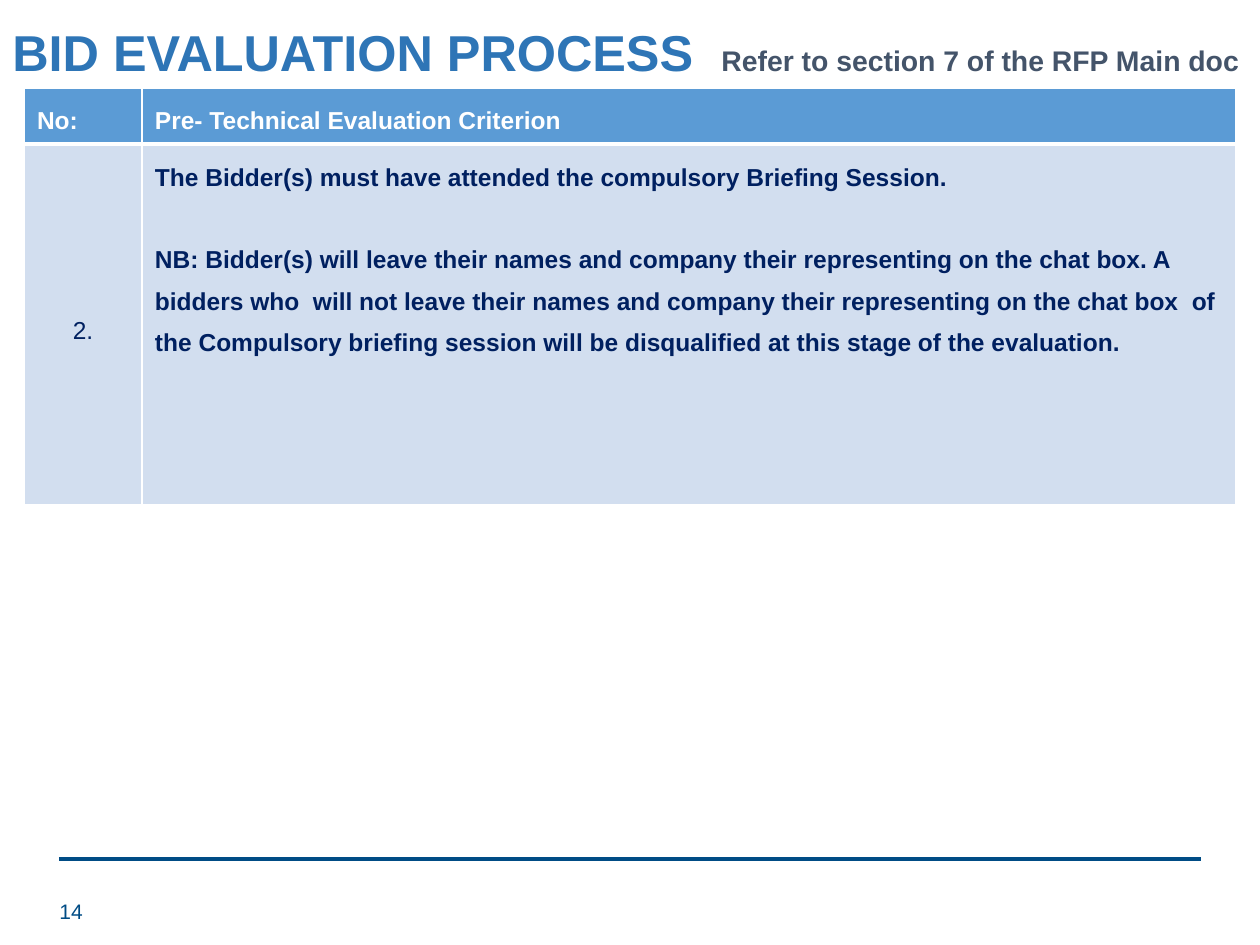
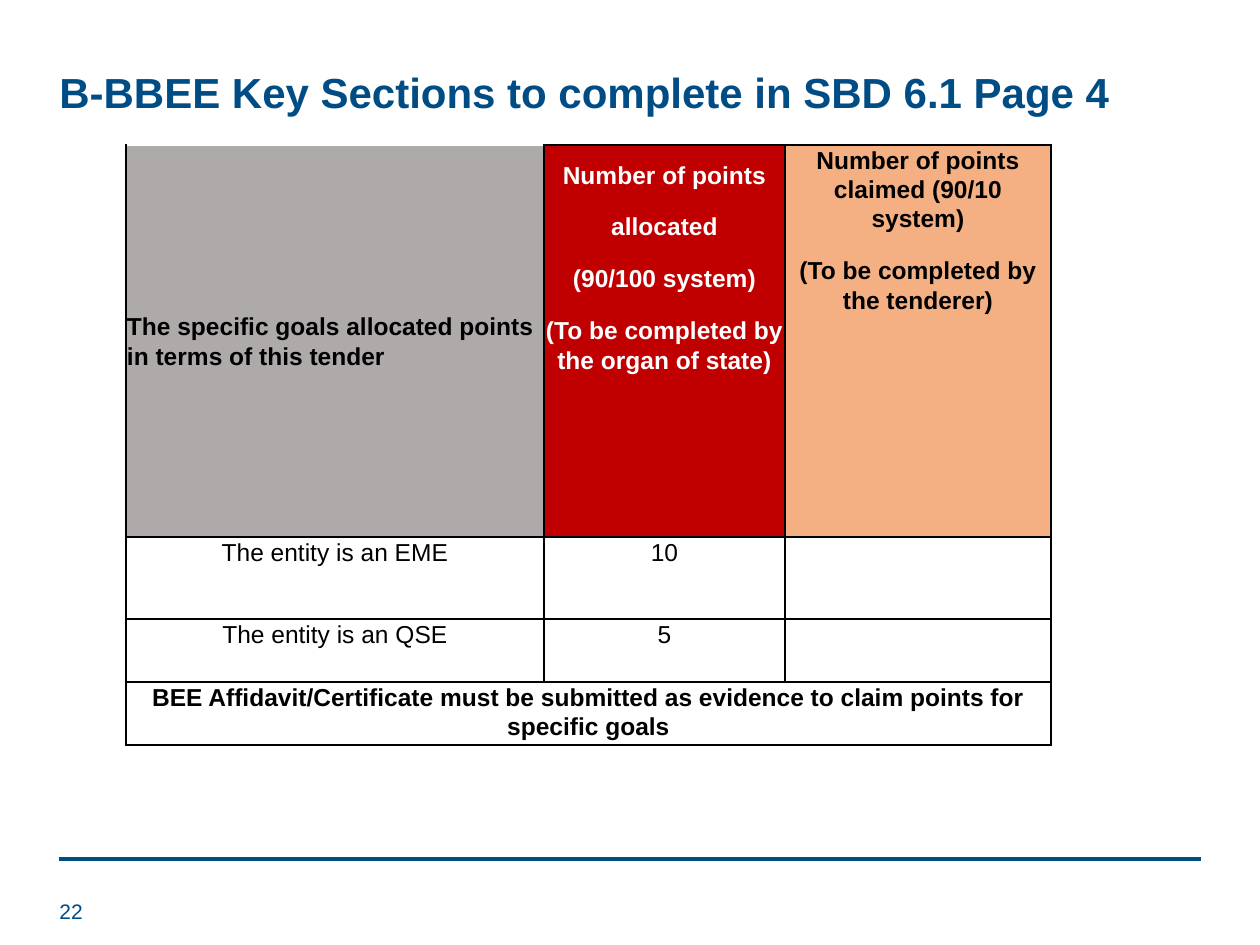
import pptx
import pptx.util
import pptx.dml.color
import pptx.enum.shapes
import pptx.enum.text
import pptx.oxml
import pptx.oxml.ns
from lxml import etree

PX = 914400 / 126
FONT = "Arial"
NAVY, BLUE, SLATE = "004C85", "2E75B6", "44546A"
BLACK, WHITE, INK = "000000", "FFFFFF", "002060"
HEADER_BLUE, ROW_BLUE = "5B9BD5", "D2DEEF"
GREY, RED, PEACH = "AEAAAA", "C00000", "F4B083"
ALIGN = {"left": pptx.enum.text.PP_ALIGN.LEFT, "center": pptx.enum.text.PP_ALIGN.CENTER}
ANCHOR = {"top": pptx.enum.text.MSO_ANCHOR.TOP, "middle": pptx.enum.text.MSO_ANCHOR.MIDDLE}

SLIDES = [
    {
        "page": "14",
        "title": [("BID EVALUATION PROCESS", 28.8, BLUE),
                  ("\tRefer to section 7 of the RFP Main doc", 16.2, SLATE)],
        "title_box": (0, 15, 1260, 73),
        "title_tab": 709,
        "table": {
            "at": (24, 88), "columns": (118, 1094), "heights": (54, 361),
            "insets": (13, 6), "line_spacing": 1.5, "gap": 23.7,
            "rows": [
                [{"text": ["No:"], "fill": HEADER_BLUE, "color": WHITE, "bold": True},
                 {"text": ["Pre- Technical Evaluation Criterion"],
                  "fill": HEADER_BLUE, "color": WHITE, "bold": True}],
                [{"text": ["2."], "fill": ROW_BLUE, "color": INK,
                  "align": "center", "anchor": "middle"},
                 {"text": ["The Bidder(s) must have attended the compulsory Briefing Session.",
                           "NB: Bidder(s) will leave their names and company their representing "
                           "on the chat box. A bidders who  will not leave their names and company "
                           "their representing on the chat box  of the Compulsory briefing session "
                           "will be disqualified at this stage of the evaluation."],
                  "fill": ROW_BLUE, "color": INK, "bold": True}],
            ],
            "border": WHITE, "header_rule": 3,
        },
    },
    {
        "page": "22",
        "title": [("B-BBEE Key Sections to complete in SBD 6.1 Page 4", 24, NAVY)],
        "title_box": (47, 60, 1086, 73),
        "table": {
            "at": (126, 145), "columns": (418, 241, 266), "heights": (392, 82, 63, 59),
            "insets": (1, 0), "line_spacing": 1.07, "gap": 12.8, "align": "center",
            "rows": [
                [{"text": ["The specific goals allocated points in terms of this tender"],
                  "fill": GREY, "bold": True, "align": "left", "anchor": "middle",
                  "open_top": True},
                 {"text": ["Number of points", "allocated", "(90/100 system)",
                           "(To be completed by the organ of state)"],
                  "fill": RED, "color": WHITE, "bold": True, "top": 15},
                 {"text": ["Number of points claimed (90/10 system)",
                           "(To be completed by the tenderer)"],
                  "fill": PEACH, "bold": True}],
                [{"text": ["The entity is an EME"]}, {"text": ["10"]}, {}],
                [{"text": ["The entity is an QSE"]}, {"text": ["5"]}, {}],
                [{"text": ["BEE Affidavit/Certificate must be submitted as evidence "
                           "to claim points for specific goals"],
                  "bold": True, "span": 3}, {}, {}],
            ],
            "border": BLACK, "header_rule": 1,
        },
    },
]


def px(length):
    return round(length * PX)


def rgb(value):
    return pptx.dml.color.RGBColor.from_string(value)


def style(font, size, color, bold=False):
    font.name = FONT
    font.size = pptx.util.Pt(size)
    font.bold = bold
    font.color.rgb = rgb(color)


def add_box(slide, box, anchor):
    frame = slide.shapes.add_textbox(*map(px, box)).text_frame
    frame.word_wrap = True
    frame.vertical_anchor = ANCHOR[anchor]
    return frame


def add_title(slide, page):
    title = add_box(slide, page["title_box"], "top").paragraphs[0]
    if "title_tab" in page:
        tabs = etree.SubElement(title._p.get_or_add_pPr(), pptx.oxml.ns.qn("a:tabLst"))
        etree.SubElement(tabs, pptx.oxml.ns.qn("a:tab"),
                         pos=str(px(page["title_tab"])), algn="l")
    for words, size, color in page["title"]:
        run = title.add_run()
        run.text = words
        style(run.font, size, color, True)


def add_footer(slide, number):
    rule = slide.shapes.add_connector(pptx.enum.shapes.MSO_CONNECTOR.STRAIGHT,
                                      px(59), px(859), px(1201), px(859))
    rule.line.color.rgb = rgb(NAVY)
    rule.line.width = pptx.util.Pt(2)
    etree.SubElement(rule._element.spPr, pptx.oxml.ns.qn("a:effectLst"))
    label = add_box(slide, (47, 886, 284, 50), "middle").paragraphs[0]
    label.text = number
    style(label.font, 12, NAVY)


def set_borders(cell, color, widths):
    properties = cell._tc.get_or_add_tcPr()
    for position, (side, width) in enumerate(widths.items()):
        properties.insert(position, pptx.oxml.parse_xml(
            f'<a:ln{side} {pptx.oxml.ns.nsdecls("a")} w="{pptx.util.Pt(width)}">'
            f'<a:solidFill><a:srgbClr val="{color}"/></a:solidFill></a:ln{side}>'))


def fill_cell(cell, content, grid):
    side, edge = grid["insets"]
    cell.margin_left = cell.margin_right = px(side)
    cell.margin_top, cell.margin_bottom = px(content.get("top", edge)), px(edge)
    cell.vertical_anchor = ANCHOR[content.get("anchor", "top")]
    if "fill" in content:
        cell.fill.solid()
        cell.fill.fore_color.rgb = rgb(content["fill"])
    else:
        cell.fill.background()
    frame = cell.text_frame
    for index, words in enumerate(content.get("text", [])):
        paragraph = frame.add_paragraph() if index else frame.paragraphs[0]
        paragraph.text = words
        paragraph.alignment = ALIGN[content.get("align", grid.get("align", "left"))]
        paragraph.line_spacing = grid["line_spacing"]
        if index:
            paragraph.space_before = pptx.util.Pt(grid["gap"])
        style(paragraph.font, 14, content.get("color", BLACK), content.get("bold", False))


def add_grid(slide, grid):
    columns, heights = grid["columns"], grid["heights"]
    table = slide.shapes.add_table(
        len(heights), len(columns), *map(px, (*grid["at"], sum(columns), sum(heights)))).table
    table.first_row = table.horz_banding = False
    for column, width in zip(table.columns, columns):
        column.width = px(width)
    for r, (height, contents) in enumerate(zip(heights, grid["rows"])):
        table.rows[r].height = px(height)
        for c, content in enumerate(contents):
            cell = table.cell(r, c)
            fill_cell(cell, content, grid)
            widths = {"L": 1, "R": 1, "T": grid["header_rule"] if r == 1 else 1,
                      "B": grid["header_rule"] if r == 0 else 1}
            if content.get("open_top"):
                del widths["T"]
            set_borders(cell, grid["border"], widths)
            if "span" in content:
                cell.merge(table.cell(r, c + content["span"] - 1))


def main():
    deck = pptx.Presentation()
    deck.slide_width, deck.slide_height = px(1260), px(945)
    for page in SLIDES:
        slide = deck.slides.add_slide(deck.slide_layouts[6])
        add_footer(slide, page["page"])
        add_title(slide, page)
        add_grid(slide, page["table"])
    deck.save("out.pptx")


if __name__ == "__main__":
    main()
